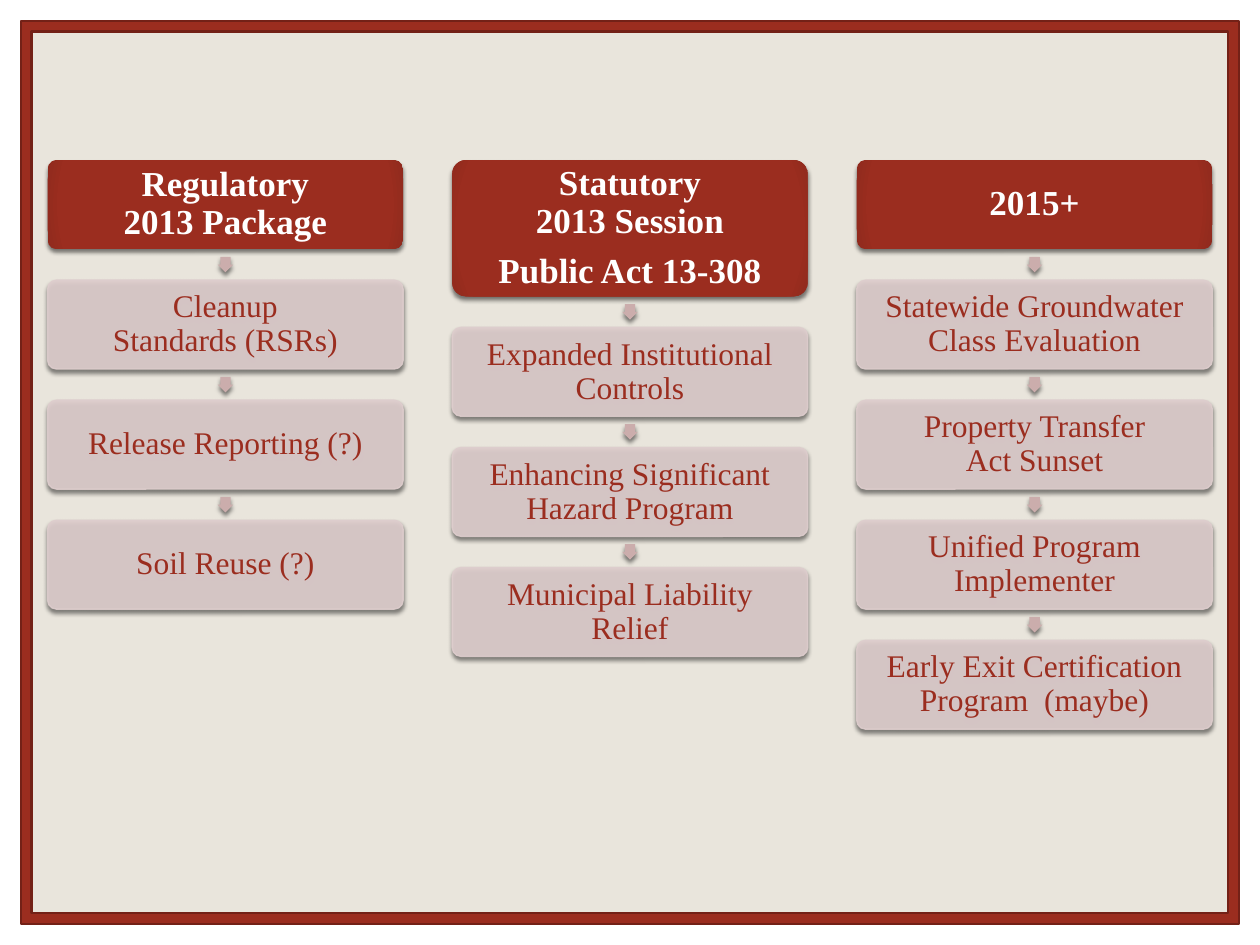
from dataclasses import dataclass

from lxml.etree import SubElement
from pptx import Presentation
from pptx.dml.color import RGBColor
from pptx.enum.shapes import MSO_SHAPE
from pptx.enum.text import MSO_ANCHOR, PP_ALIGN
from pptx.oxml import parse_xml
from pptx.oxml.ns import nsdecls, qn
from pptx.util import Pt


@dataclass(frozen=True)
class Theme:
    background: str = "E9E5DC"
    primary: str = "9B2D1F"
    primary_edge: str = "902A1D"
    frame_line: str = "732117"
    step: str = "DECDCD"
    arrow: str = "CBADAC"
    white: str = "FFFFFF"
    shadow: str = "000000"
    font: str = "Times New Roman"
    header_size: float = 20
    step_size: float = 18


THEME = Theme()
BOX_HEIGHT = 50.8
BOX_WIDTH = 4 * BOX_HEIGHT
GAP = 17.8
ARROW_SIZE = GAP / 2
TALL_HEADER = 77.8
STEP_OPACITY = 90
COLUMN_LEFT, COLUMN_TOP, COLUMN_PITCH = 27.2, 91.5, 231.2

COLUMNS = [
    (["Regulatory", "2013 Package"], [
        ["Cleanup", "Standards (RSRs)"],
        ["Release Reporting (?)"],
        ["Soil Reuse (?)"],
    ]),
    (["Statutory", "2013 Session", "Public Act 13-308"], [
        ["Expanded Institutional", "Controls"],
        ["Enhancing Significant", "Hazard Program"],
        ["Municipal Liability", "Relief"],
    ]),
    (["2015+"], [
        ["Statewide Groundwater", "Class Evaluation"],
        ["Property Transfer", "Act Sunset"],
        ["Unified Program", "Implementer"],
        ["Early Exit Certification", "Program  (maybe)"],
    ]),
]


def add_plain_shape(page, kind, left, top, width, height, color):
    shape = page.shapes.add_shape(kind, Pt(left), Pt(top), Pt(width), Pt(height))
    shape.shadow.inherit = False
    shape.fill.solid()
    shape.fill.fore_color.rgb = RGBColor.from_string(color)
    shape.line.fill.background()
    return shape


def add_shadow(shape):
    effects = shape.element.spPr.find(qn("a:effectLst"))
    effects.append(parse_xml(
        f'<a:outerShdw {nsdecls("a")} blurRad="{Pt(2.5)}" dist="{Pt(2)}" dir="5400000" '
        f'rotWithShape="0"><a:srgbClr val="{THEME.shadow}"><a:alpha val="50000"/>'
        f'</a:srgbClr></a:outerShdw>'))


def set_gradient(shape):
    """Darken the outermost tenth of a solid header."""
    stops = ((0, THEME.primary), (90, THEME.primary), (100, THEME.primary_edge))
    stop_xml = "".join(f'<a:gs pos="{place * 1000}"><a:srgbClr val="{color}"/></a:gs>'
                       for place, color in stops)
    gradient = parse_xml(
        f'<a:gradFill {nsdecls("a")} rotWithShape="1"><a:gsLst>{stop_xml}</a:gsLst>'
        f'<a:path path="circle"><a:fillToRect l="100000" t="100000" r="100000" b="100000"/>'
        f'</a:path></a:gradFill>')
    properties = shape.element.spPr
    properties.replace(properties.find(qn("a:solidFill")), gradient)


def set_step_style(shape):
    shape.line.color.rgb = RGBColor.from_string(THEME.step)
    shape.line.width = Pt(0.79)
    for color in shape.element.spPr.iter(qn("a:srgbClr")):
        SubElement(color, qn("a:alpha"), val=str(STEP_OPACITY * 1000))


def add_lines(shape, lines, size, color, bold):
    frame = shape.text_frame
    frame.word_wrap = True
    frame.vertical_anchor = MSO_ANCHOR.MIDDLE
    frame.margin_left = frame.margin_right = Pt(3.6)
    frame.margin_top = frame.margin_bottom = Pt(3.6)
    for index, line in enumerate(lines):
        para = frame.paragraphs[0] if index == 0 else frame.add_paragraph()
        para.text = line
        para.alignment = PP_ALIGN.CENTER
        para.line_spacing = 0.9
        if index == 2:
            para.space_before = Pt(7)
        para.font.name = THEME.font
        para.font.size = Pt(size)
        para.font.bold = bold
        para.font.color.rgb = RGBColor.from_string(color)


def add_box(page, left, top, height, lines, is_header):
    fill = THEME.primary if is_header else THEME.step
    box = add_plain_shape(page, MSO_SHAPE.ROUNDED_RECTANGLE, left, top, BOX_WIDTH, height, fill)
    box.adjustments[0] = 0.1
    if is_header:
        set_gradient(box)
        add_lines(box, lines, THEME.header_size, THEME.white, True)
    else:
        set_step_style(box)
        add_lines(box, lines, THEME.step_size, THEME.primary, False)
    add_shadow(box)


def add_arrow(page, center, top):
    arrow = add_plain_shape(page, MSO_SHAPE.RIGHT_ARROW, center - ARROW_SIZE / 2,
                            top + (GAP - ARROW_SIZE) / 2, ARROW_SIZE, ARROW_SIZE, THEME.arrow)
    arrow.rotation = 90
    arrow.adjustments[0] = 0.667
    arrow.adjustments[1] = 0.5
    add_shadow(arrow)


def add_column(page, left, top, header, steps):
    height = TALL_HEADER if len(header) > 2 else BOX_HEIGHT
    add_box(page, left, top, height, header, True)
    top += height
    for lines in steps:
        add_arrow(page, left + BOX_WIDTH / 2, top)
        add_box(page, left, top + GAP, BOX_HEIGHT, lines, False)
        top += GAP + BOX_HEIGHT


def add_frame(page, left, top, width, height):
    frame = add_plain_shape(page, MSO_SHAPE.FRAME, left, top, width, height, THEME.primary)
    frame.adjustments[0] = 0.012
    frame.line.color.rgb = RGBColor.from_string(THEME.frame_line)
    frame.line.width = Pt(1.5)


def main():
    deck = Presentation()
    deck.slide_width, deck.slide_height = Pt(720), Pt(540)
    page = deck.slides.add_slide(deck.slide_layouts[6])
    panel = (12, 12, 696, 516)
    add_plain_shape(page, MSO_SHAPE.RECTANGLE, *panel, THEME.background)
    for index, (header, steps) in enumerate(COLUMNS):
        add_column(page, COLUMN_LEFT + index * COLUMN_PITCH, COLUMN_TOP, header, steps)
    add_frame(page, *panel)
    deck.save("out.pptx")


if __name__ == "__main__":
    main()
